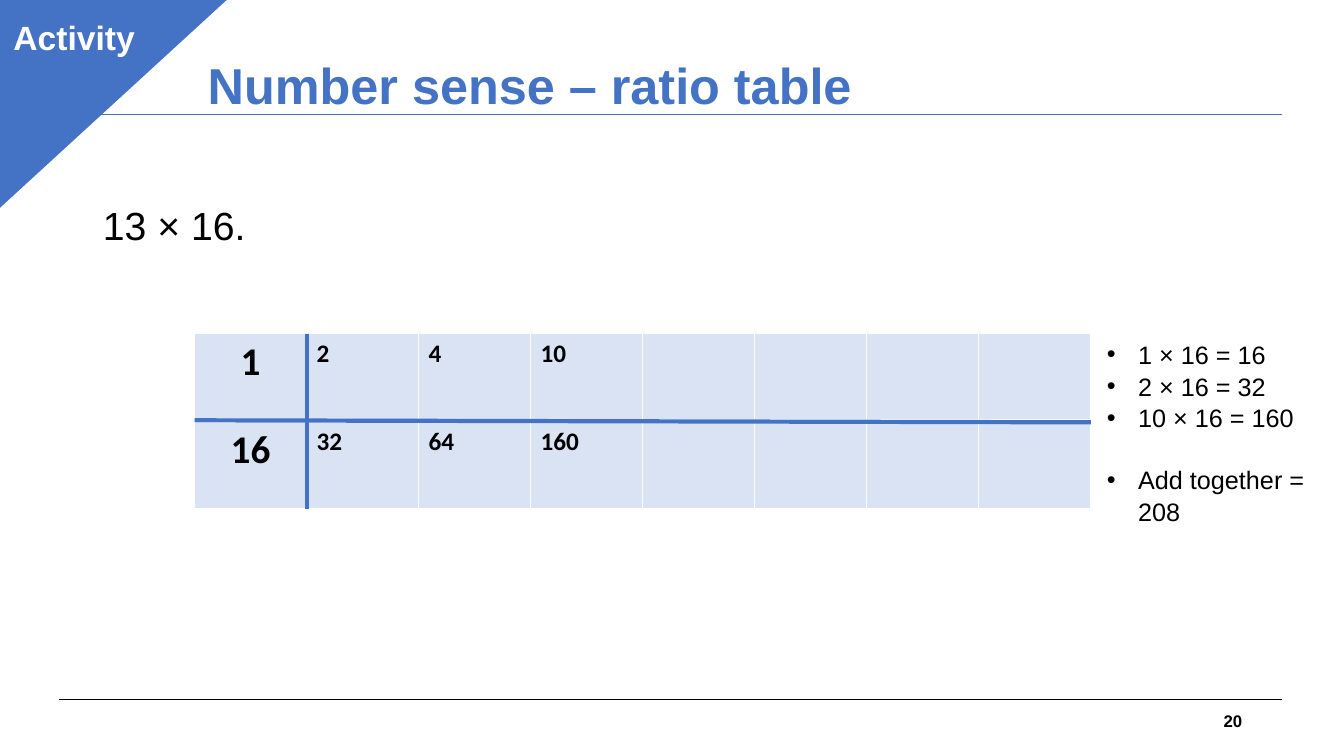
import pptx
import pptx.util
import pptx.dml.color
import pptx.enum.shapes
import pptx.enum.text
import pptx.oxml.ns
import lxml.etree

Inches = pptx.util.Inches
Pt = pptx.util.Pt
RGBColor = pptx.dml.color.RGBColor
ALIGN = pptx.enum.text.PP_ALIGN
ANCHOR = pptx.enum.text.MSO_ANCHOR
SHAPE = pptx.enum.shapes.MSO_SHAPE
qn = pptx.oxml.ns.qn

BLUE = RGBColor(0x44, 0x72, 0xC4)
PALE_BLUE = RGBColor(0xDA, 0xE3, 0xF3)
BLACK = RGBColor(0, 0, 0)
WHITE = RGBColor(255, 255, 255)


class SlideBuilder:
    """Holds the text style and the current slide."""

    font_name = "Arial"
    table_font = "Calibri"

    def __init__(self, slide):
        self.slide = slide

    def add_text(self, paragraph, text, size, color=BLACK, bold=False, font=None, **formats):
        run = paragraph.add_run()
        run.text = text
        font_values = {"name": font or self.font_name, "size": Pt(size), "bold": bold}
        for name, value in font_values.items():
            setattr(run.font, name, value)
        run.font.color.rgb = color
        for name, value in formats.items():
            setattr(paragraph, name, value)

    def set_bullet(self, paragraph, symbol=None, indent=0):
        properties = paragraph._p.get_or_add_pPr()
        properties.set("marL", str(Inches(indent)))
        properties.set("indent", str(-Inches(indent)))
        if symbol:
            lxml.etree.SubElement(properties, qn("a:buFont"), typeface=self.font_name)
            lxml.etree.SubElement(properties, qn("a:buChar"), char=symbol)
        else:
            lxml.etree.SubElement(properties, qn("a:buNone"))

    def format_frame(self, shape, anchor):
        frame_values = {
            "word_wrap": True,
            "auto_size": pptx.enum.text.MSO_AUTO_SIZE.NONE,
            "vertical_anchor": anchor,
        }
        for name, value in frame_values.items():
            setattr(shape.text_frame, name, value)
        return shape.text_frame

    def placeholder(self, index, left, top, width, height, anchor=ANCHOR.TOP):
        shape = self.slide.placeholders[index]
        box = {"left": left, "top": top, "width": width, "height": height}
        for name, value in box.items():
            setattr(shape, name, Inches(value))
        return self.format_frame(shape, anchor).paragraphs[0]

    def text_box(self, left, top, width, height, anchor=ANCHOR.TOP):
        shape = self.slide.shapes.add_textbox(
            Inches(left), Inches(top), Inches(width), Inches(height))
        return self.format_frame(shape, anchor)

    def shape(self, kind, left, top, width, height, color, line_width):
        shape = self.slide.shapes.add_shape(
            kind, Inches(left), Inches(top), Inches(width), Inches(height))
        shape.shadow.inherit = False
        shape.fill.solid()
        shape.fill.fore_color.rgb = color
        shape.line.color.rgb = color
        shape.line.width = Pt(line_width)
        return shape

    def line(self, x1, y1, x2, y2, color, width):
        connector = self.slide.shapes.add_connector(
            pptx.enum.shapes.MSO_CONNECTOR.STRAIGHT,
            Inches(x1), Inches(y1), Inches(x2), Inches(y2))
        connector.line.color.rgb = color
        connector.line.width = Pt(width)
        lxml.etree.SubElement(connector._element.spPr, qn("a:effectLst"))

    def border_cell(self, cell, widths):
        properties = cell._tc.get_or_add_tcPr()
        for side, width in widths.items():
            line = lxml.etree.SubElement(properties, qn(f"a:ln{side}"), w=str(Pt(width)))
            fill = lxml.etree.SubElement(line, qn("a:solidFill"))
            lxml.etree.SubElement(fill, qn("a:srgbClr"), val=str(WHITE))

    def ratio_table(self, rows, columns, left, top, width, height):
        table = self.slide.shapes.add_table(
            len(rows), columns, Inches(left), Inches(top), Inches(width), Inches(height)).table
        table.first_row = False
        table.horz_banding = False
        for row_index, values in enumerate(rows):
            for column in range(columns):
                cell = table.cell(row_index, column)
                top_width, bottom_width = (1, 3) if row_index == 0 else (3, 1)
                self.border_cell(cell, {"L": 1, "R": 1, "T": top_width, "B": bottom_width})
                cell.fill.solid()
                cell.fill.fore_color.rgb = PALE_BLUE
                if column < len(values):
                    is_base = column == 0
                    self.add_text(cell.text_frame.paragraphs[0], values[column],
                                  28 if is_base else 18, bold=True, font=self.table_font,
                                  alignment=ALIGN.CENTER if is_base else ALIGN.LEFT)


def main():
    presentation = pptx.Presentation()
    presentation.slide_width = Inches(13.33)
    presentation.slide_height = Inches(7.5)
    slide = presentation.slides.add_slide(presentation.slide_layouts[1])
    builder = SlideBuilder(slide)

    # Header and footer rules
    builder.line(0.59, 6.94, 12.72, 6.94, BLACK, 0.75)
    builder.line(0.59, 1.14, 12.72, 1.14, BLUE, 0.75)

    # Title and problem
    title = builder.placeholder(0, 1.96, 0.15, 11, 1.45, ANCHOR.MIDDLE)
    builder.add_text(title, "Number sense – ratio table", 36, BLUE, True,
                     alignment=ALIGN.LEFT, line_spacing=0.9)
    problem = builder.placeholder(1, 0.92, 2, 11.5, 4.76)
    builder.add_text(problem, "13 × 16.", 28, line_spacing=0.9, space_before=Pt(10))
    builder.set_bullet(problem)

    # Slide number
    number = builder.text_box(9.42, 6.95, 3, 0.4, ANCHOR.MIDDLE)
    builder.add_text(number.paragraphs[0], "20", 12, bold=True, alignment=ALIGN.RIGHT)

    # Corner triangle
    corner = builder.shape(SHAPE.ISOSCELES_TRIANGLE, -0.03, -0.02, 2.29, 2.1, BLUE, 1)
    corner.adjustments[0] = 0
    corner._element.spPr.find(qn("a:xfrm")).set("flipV", "1")

    # Ratio table with its dividing lines
    left, top, width, height, columns = 1.93, 3.31, 8.89, 1.74, 8
    rows = [["1", "2", "4", "10"], ["16", "32", "64", "160"]]
    builder.ratio_table(rows, columns, left, top, width, height)
    builder.line(left, 4.17, left + width, 4.19, BLUE, 3)
    divider = left + width / columns
    builder.line(divider, top, divider, top + height, BLUE, 3)

    # Activity label
    label = builder.shape(SHAPE.RECTANGLE, 0.01, 0.12, 1.45, 0.5, BLUE, 0.75)
    frame = builder.format_frame(label, ANCHOR.TOP)
    builder.add_text(frame.paragraphs[0], "Activity", 24, WHITE, True, alignment=ALIGN.CENTER)

    # Working steps, with a one-line gap before the sum
    steps = ["1 × 16 = 16", "2 × 16 = 32", "10 × 16 = 160", "Add together = 208"]
    frame = builder.text_box(10.88, 3.3, 2.25, 1.92)
    for index, step in enumerate(steps):
        paragraph = frame.add_paragraph() if index else frame.paragraphs[0]
        gap = 21.6 if step == steps[-1] else 0
        builder.add_text(paragraph, step, 18, line_spacing=1.05, space_before=Pt(gap))
        builder.set_bullet(paragraph, "•", 0.31)

    presentation.save("out.pptx")


if __name__ == "__main__":
    main()
